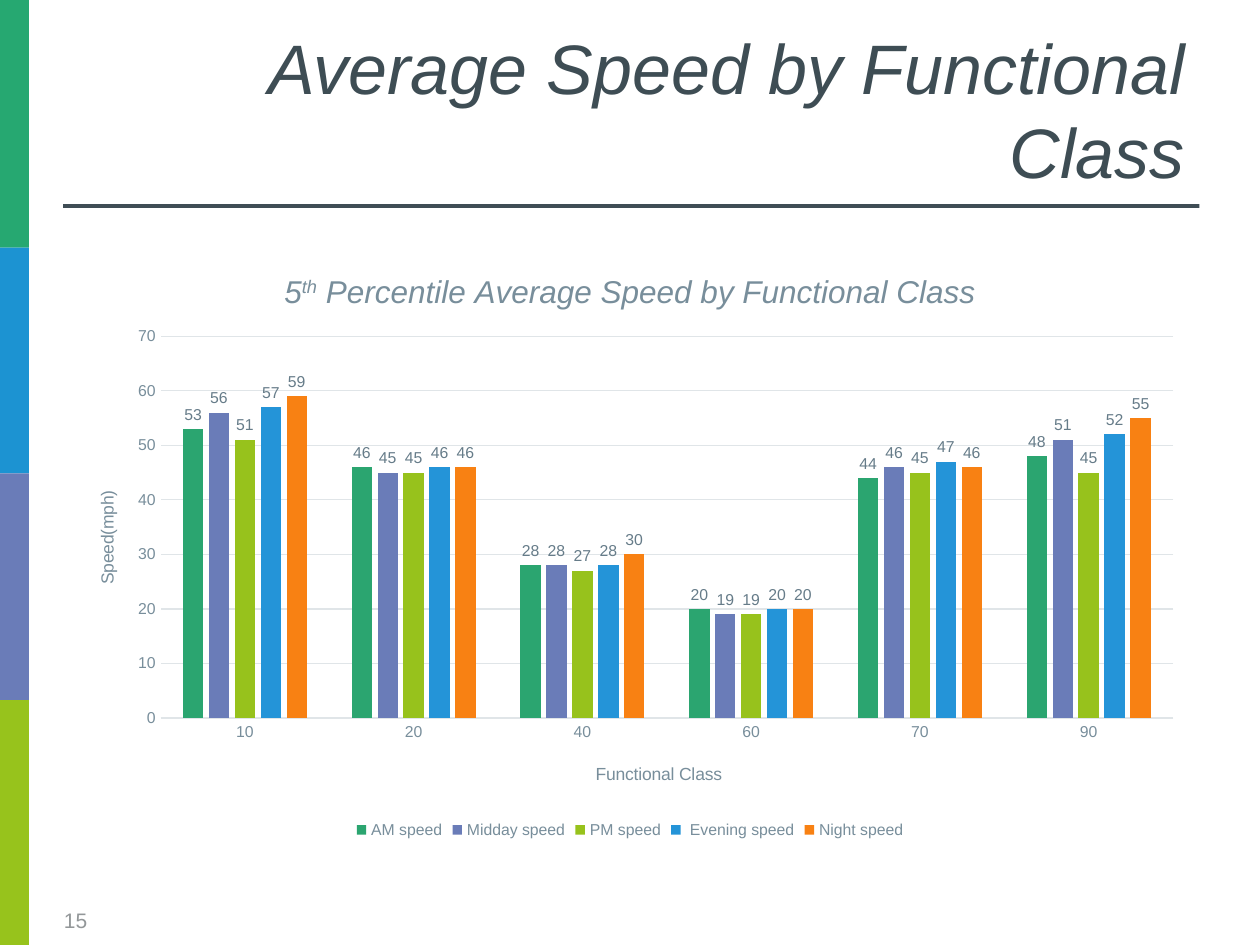
import pptx
import pptx.chart.data
import pptx.dml.color
import pptx.enum.chart
import pptx.enum.shapes
import pptx.enum.text
import pptx.oxml
import pptx.util
from pptx.dml.color import RGBColor

FONT = "Arial"
GREEN = RGBColor(0x26, 0xA8, 0x71)
BLUE = RGBColor(0x1C, 0x93, 0xD2)
PURPLE = RGBColor(0x6A, 0x7C, 0xB8)
LIME = RGBColor(0x97, 0xC3, 0x1C)
SLATE = RGBColor(0x3F, 0x4D, 0x55)
TITLE_COLOR = RGBColor(0x3E, 0x4D, 0x54)
NUMBER_COLOR = RGBColor(0x93, 0x97, 0x99)
AXIS_TEXT = RGBColor(0x78, 0x8E, 0x9B)
LABEL_TEXT = RGBColor(0x66, 0x7C, 0x89)
GRID = RGBColor(0xE0, 0xE5, 0xE8)

CLASSES = ["10", "20", "40", "60", "70", "90"]
SPEEDS = [
    ("AM speed", [53, 46, 28, 20, 44, 48], RGBColor(0x2B, 0xA5, 0x70)),
    ("Midday speed", [56, 45, 28, 19, 46, 51], PURPLE),
    ("PM speed", [51, 45, 27, 19, 45, 45], RGBColor(0x97, 0xC2, 0x1C)),
    (" Evening speed", [57, 46, 28, 20, 47, 52], RGBColor(0x24, 0x94, 0xD8)),
    ("Night speed", [59, 46, 30, 20, 46, 55], RGBColor(0xF8, 0x81, 0x13)),
]


def inches(*lengths):
    return [pptx.util.Inches(length) for length in lengths]


def set_font(font, size, color, italic=False):
    font.name = FONT
    font.size = pptx.util.Pt(size)
    font.color.rgb = color
    font.bold = False
    font.italic = italic


def add_bar(slide, box, color):
    bar = slide.shapes.add_shape(pptx.enum.shapes.MSO_SHAPE.RECTANGLE, *inches(*box))
    bar.shadow.inherit = False
    bar.fill.solid()
    bar.fill.fore_color.rgb = color
    bar.line.fill.background()


def add_side_band(slide, left, top, width, height):
    """Stack four coloured blocks, given as shares of the band's height."""
    shares = [(0.262, GREEN), (0.239, BLUE), (0.24, PURPLE), (0.259, LIME)]
    for share, color in shares:
        add_bar(slide, (left, top, width, share * height), color)
        top += share * height


def add_heading(slide, left, top, width, height):
    title = slide.shapes.title
    title.left, title.top, title.width, title.height = inches(left, top, width, height)
    frame = title.text_frame
    frame.text = "Average Speed by Functional Class"
    frame.word_wrap = True
    frame.auto_size = pptx.enum.text.MSO_AUTO_SIZE.NONE
    frame.vertical_anchor = pptx.enum.text.MSO_ANCHOR.BOTTOM
    paragraph = frame.paragraphs[0]
    paragraph.alignment = pptx.enum.text.PP_ALIGN.RIGHT
    set_font(paragraph.font, 40, TITLE_COLOR, italic=True)
    add_bar(slide, (left, top + height + 0.04, width + 0.02, 0.03), SLATE)


def add_page_number(slide, left, top, width, height):
    box = slide.shapes.add_textbox(*inches(left, top, width, height))
    frame = box.text_frame
    frame.word_wrap = True
    frame.vertical_anchor = pptx.enum.text.MSO_ANCHOR.MIDDLE
    frame.text = "15"
    set_font(frame.paragraphs[0].font, 12, NUMBER_COLOR)


def format_axis(axis, title):
    axis.major_tick_mark = axis.minor_tick_mark = pptx.enum.chart.XL_TICK_MARK.NONE
    set_font(axis.tick_labels.font, 9, AXIS_TEXT)
    frame = axis.axis_title.text_frame
    frame.text = title
    set_font(frame.paragraphs[0].font, 10, AXIS_TEXT)


def set_chart_title(chart):
    paragraph = chart.chart_title.text_frame.paragraphs[0]
    set_font(paragraph.font, 18, AXIS_TEXT, italic=True)
    for text in ("5", "th", " Percentile Average Speed by Functional Class"):
        run = paragraph.add_run()
        run.text = text
        set_font(run.font, 18, AXIS_TEXT, italic=True)
        if text == "th":
            run.font._element.set("baseline", "30000")


def set_layout(element, **shares):
    """Fix a chart part at shares of the chart's size."""
    for old in element.findall(pptx.oxml.ns.qn("c:layout")):
        element.remove(old)
    inner = '<c:layoutTarget val="inner"/>' if "w" in shares else ""
    modes = "".join(f'<c:{key}Mode val="edge"/>' for key in "xy")
    values = "".join(f'<c:{key} val="{share}"/>' for key, share in shares.items())
    layout = pptx.oxml.parse_xml(
        f'<c:layout {pptx.oxml.ns.nsdecls("c")}><c:manualLayout>'
        f"{inner}{modes}{values}</c:manualLayout></c:layout>")
    text = element.find(pptx.oxml.ns.qn("c:tx"))
    element.insert(0 if text is None else 1, layout)


def add_speed_chart(slide, left, top, width, height):
    data = pptx.chart.data.CategoryChartData()
    data.categories = CLASSES
    for name, values, _ in SPEEDS:
        data.add_series(name, values)
    chart = slide.shapes.add_chart(
        pptx.enum.chart.XL_CHART_TYPE.COLUMN_CLUSTERED,
        *inches(left, top, width, height), data).chart
    set_font(chart.font, 10, SLATE)
    set_chart_title(chart)

    chart.has_legend = True
    chart.legend.position = pptx.enum.chart.XL_LEGEND_POSITION.BOTTOM
    chart.legend.include_in_layout = False
    set_font(chart.legend.font, 9, AXIS_TEXT)

    format_axis(chart.category_axis, "Functional Class")
    chart.category_axis.format.line.color.rgb = GRID
    chart.category_axis.format.line.width = pptx.util.Pt(0.75)
    speed_axis = chart.value_axis
    format_axis(speed_axis, "Speed(mph)")
    speed_axis.minimum_scale, speed_axis.maximum_scale = 0, 70
    speed_axis.major_unit = 10
    speed_axis.format.line.fill.background()
    speed_axis.major_gridlines.format.line.color.rgb = GRID
    speed_axis.major_gridlines.format.line.width = pptx.util.Pt(0.75)

    plot = chart.plots[0]
    plot.gap_width, plot.overlap = 219, -27
    plot.vary_by_categories = False
    for series, (_, _, color) in zip(plot.series, SPEEDS):
        series.format.fill.solid()
        series.format.fill.fore_color.rgb = color
        labels = series.data_labels
        labels.show_value = True
        labels.position = pptx.enum.chart.XL_LABEL_POSITION.OUTSIDE_END
        set_font(labels.font, 9, LABEL_TEXT)

    plot_area = chart._chartSpace.chart.plotArea
    set_layout(plot_area, x=0.086, y=0.146, w=0.893, h=0.642)
    set_layout(chart.category_axis.axis_title._element, x=0.467, y=0.857)
    set_layout(speed_axis.axis_title._element, x=0.026, y=0.4)


def main():
    presentation = pptx.Presentation()
    presentation.slide_width, presentation.slide_height = inches(10, 7.5)
    slide = presentation.slides.add_slide(presentation.slide_layouts[5])
    add_side_band(slide, 0, 0, 0.23, 7.5)
    add_heading(slide, 0.5, -0.01, 9, 1.59)
    add_page_number(slide, 0.41, 7.1, 0.73, 0.4)
    add_speed_chart(slide, 0.5, 1.98, 9, 4.72)
    presentation.save("out.pptx")


if __name__ == "__main__":
    main()
